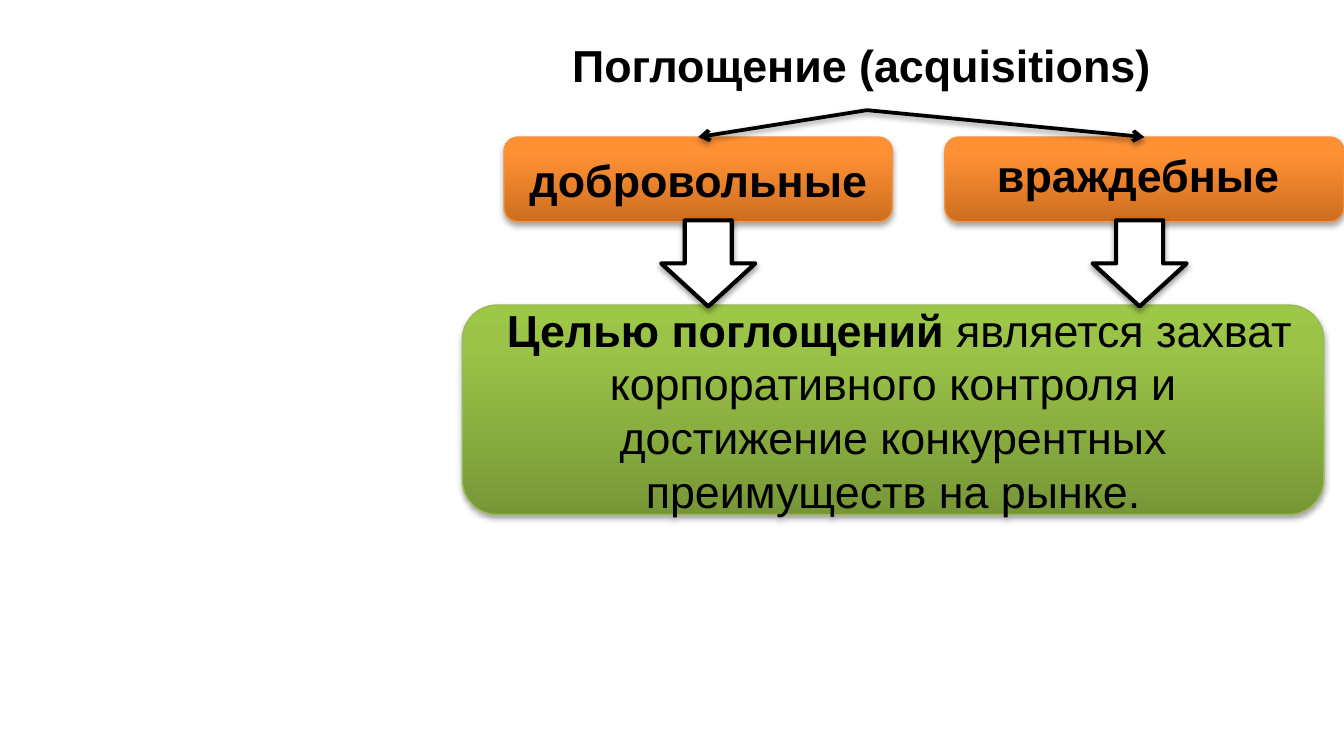
from copy import deepcopy

from lxml.etree import SubElement
from pptx import Presentation
from pptx.dml.color import RGBColor
from pptx.enum.shapes import MSO_CONNECTOR, MSO_SHAPE
from pptx.enum.text import MSO_ANCHOR, PP_ALIGN
from pptx.oxml.ns import qn
from pptx.util import Inches, Pt

TITLE = [("Поглощение (acquisitions)\u00a0", True)]
GOAL = [
    ("\u00a0Целью поглощений ", True),
    ("является захват корпоративного контроля и достижение "
     "конкурентных преимуществ на рынке.", False),
]
# text, left, width, anchor, left of the block arrow below
KINDS = [
    ("добровольные", 3.75, 2.89, MSO_ANCHOR.MIDDLE, 4.92),
    ("враждебные ", 7.03, 2.97, MSO_ANCHOR.TOP, 8.13),
]
KIND_TOP, KIND_HEIGHT = 1.02, 0.63
BRANCH_START = (6.45, 0.82)
ORANGE = [(0, "CC6E20"), (0.8, "FF9034"), (1, "FF9136")]
GREEN = [(0, "779737"), (0.8, "9BC348"), (1, "9DC746")]
BLACK, WHITE = "000000", "FFFFFF"


def color(value):
    return RGBColor.from_string(value)


def add_shadow(shape, alpha=38, distance=1.6):
    """Give a shape or connector a soft shadow below; call after its line is set."""
    effects = SubElement(shape._element.spPr, qn("a:effectLst"))
    shadow = SubElement(effects, qn("a:outerShdw"), blurRad=str(Pt(3.1)),
                        dist=str(Pt(distance)), dir="5400000", rotWithShape="0")
    tint = SubElement(shadow, qn("a:srgbClr"), val=BLACK)
    SubElement(tint, qn("a:alpha"), val=str(alpha * 1000))


def set_line(shape, value, width):
    shape.line.color.rgb = color(value)
    shape.line.width = Pt(width)


def write(shape, spans, size=24, font="Arial", anchor=MSO_ANCHOR.TOP):
    """Write one centred paragraph of (text, bold) spans."""
    frame = shape.text_frame
    frame.word_wrap = True
    frame.vertical_anchor = anchor
    para = frame.paragraphs[0]
    para.alignment = PP_ALIGN.CENTER
    for text, bold in spans:
        span = para.add_run()
        span.text = text
        span.font.size = Pt(size)
        span.font.name = font
        span.font.bold = bold
        span.font.color.rgb = color(BLACK)
    return para


def add_card(page, place, stops, edge, spans, anchor):
    """Add a rounded box with an upward gradient and text."""
    card = page.shapes.add_shape(MSO_SHAPE.ROUNDED_RECTANGLE, *map(Inches, place))
    card.fill.gradient()
    card.fill.gradient_angle = 90
    stop_list = card._element.spPr.find(qn("a:gradFill")).find(qn("a:gsLst"))
    stop_list.append(deepcopy(stop_list[-1]))
    for stop, (position, value) in zip(card.fill.gradient_stops, stops):
        stop.position = position
        stop.color.rgb = color(value)
    set_line(card, edge, 0.75)
    add_shadow(card, alpha=35, distance=1.8)
    write(card, spans, anchor=anchor)
    return card


def add_branch(page, card):
    """Draw an arrow from under the title to the top of a card."""
    start = [Inches(value) for value in BRANCH_START]
    branch = page.shapes.add_connector(MSO_CONNECTOR.STRAIGHT, *start, *start)
    branch.end_connect(card, 0)
    set_line(branch, BLACK, 2)
    SubElement(branch.line._get_or_add_ln(), qn("a:tailEnd"), type="arrow")
    add_shadow(branch)


def add_block_arrow(page, left):
    arrow = page.shapes.add_shape(MSO_SHAPE.DOWN_ARROW, Inches(left), Inches(1.64),
                                  Inches(0.7), Inches(0.64))
    arrow.fill.solid()
    arrow.fill.fore_color.rgb = color(WHITE)
    set_line(arrow, BLACK, 2.25)
    add_shadow(arrow)


def main():
    deck = Presentation()
    deck.slide_width = Inches(10)
    deck.slide_height = Inches(10 * 9 / 16)
    page = deck.slides.add_slide(deck.slide_layouts[6])

    title = page.shapes.add_textbox(*map(Inches, (3.44, 0.23, 6.03, 0.59)))
    para = write(title, TITLE)
    para.space_before = Pt(4.8)

    cards = [
        add_card(page, (left, KIND_TOP, width, KIND_HEIGHT), ORANGE, "F69240",
                 [(text, True)], anchor)
        for text, left, width, anchor, _ in KINDS
    ]
    for card in cards:
        add_branch(page, card)
    add_card(page, (3.44, 2.27, 6.41, 1.56), GREEN, "98B955", GOAL, MSO_ANCHOR.MIDDLE)
    for *_, arrow_left in KINDS:
        add_block_arrow(page, arrow_left)

    deck.save("out.pptx")


if __name__ == "__main__":
    main()
